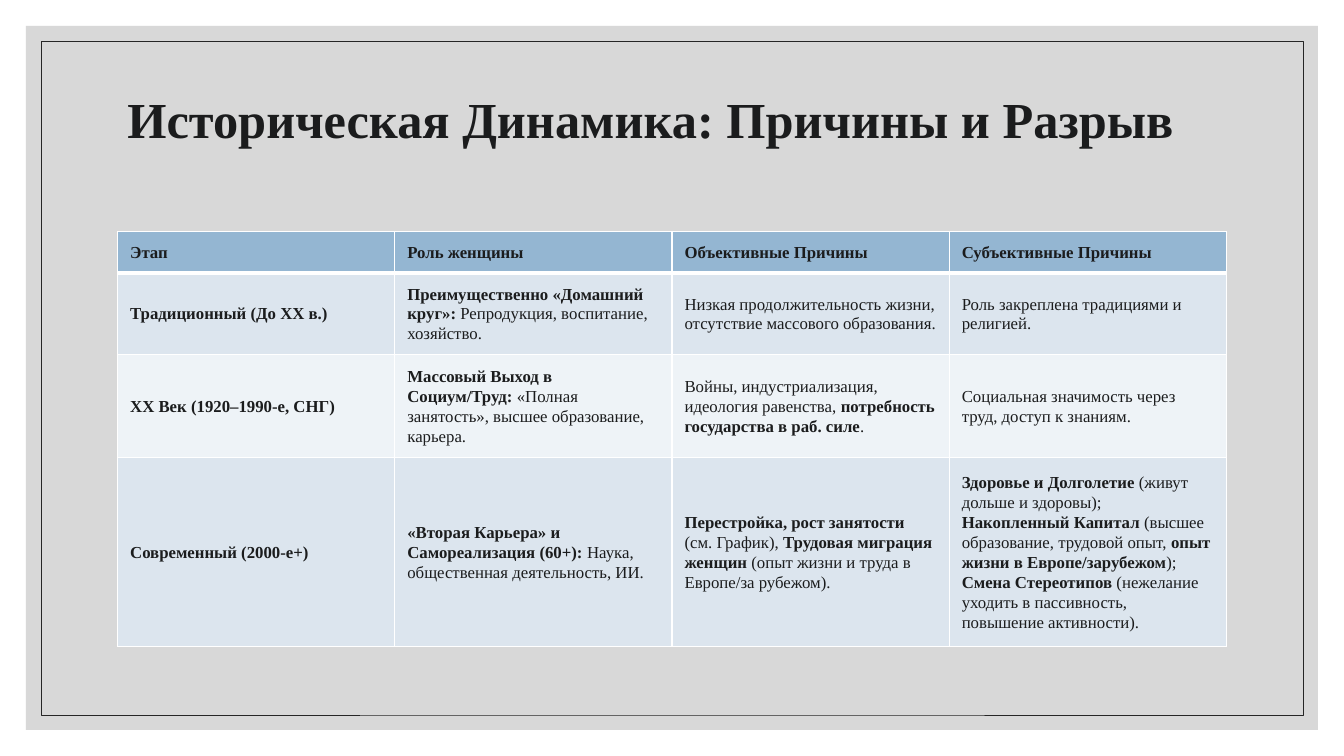
from pptx import Presentation
from pptx.dml.color import RGBColor as Rgb
from pptx.enum.shapes import MSO_SHAPE as Shape
from pptx.enum.text import MSO_ANCHOR as Anchor
from pptx.oxml import parse_xml
from pptx.util import Inches, Pt

# Theme
theme = dict(
    face="Times New Roman", ink="1B1C1D", panel="BFBFBF", frame="262626",
    rule="FFFFFF", head="94B6D2", odd="DCE5EE", even="EEF3F7",
    title=36, body=12, lead=1.07,
)
NS = "http://schemas.openxmlformats.org/drawingml/2006/main"


def unit(n):
    """Length of n steps on a grid of 160 columns by 90 rows."""
    return Inches(n / 12)


def write(area, text, size, bold, form):
    """Fill a text frame; parts between asterisks are bold."""
    for key, val in form.items():
        setattr(area, key, val)
    par = area.paragraphs[0]
    par.line_spacing = theme["lead"]
    for i, part in enumerate(text.split("*")):
        if part:
            run = par.add_run()
            run.text = part
            look = dict(name=theme["face"], size=Pt(size), bold=bold or i % 2 == 1)
            for key, val in look.items():
                setattr(run.font, key, val)
            run.font.color.rgb = Rgb.from_string(theme["ink"])


deck = Presentation()
deck.slide_width, deck.slide_height = unit(160), unit(90)
slide = deck.slides.add_slide(deck.slide_layouts[6])

# Grey panel and thin frame
for gap, kind in ((3.1, "panel"), (4.87, "frame")):
    box = slide.shapes.add_shape(
        Shape.RECTANGLE, unit(gap), unit(gap), unit(160 - 2 * gap), unit(90 - 2 * gap))
    box.shadow.inherit = False
    tone = Rgb.from_string(theme[kind])
    if kind == "panel":
        box.fill.solid()
        box.fill.fore_color.rgb = tone
        box.line.fill.background()
        clr = box.fill._xPr.find(f".//{{{NS}}}srgbClr")
        clr.append(parse_xml(f'<a:alpha xmlns:a="{NS}" val="60000"/>'))
    else:
        box.fill.background()
        box.line.color.rgb = tone
        box.line.width = Pt(0.5)

# Title, raised above the middle by its bottom margin
title = slide.shapes.add_textbox(unit(14), unit(8.4), unit(132), unit(18))
write(title.text_frame, "Историческая Динамика: Причины и Разрыв", theme["title"], True,
      dict(word_wrap=True, vertical_anchor=Anchor.MIDDLE, margin_bottom=unit(7.7)))

# Table content
rows = [
    ("*Этап*", "*Роль женщины*", "*Объективные Причины*", "*Субъективные Причины*"),
    ("*Традиционный (До XX в.)*",
     "*Преимущественно «Домашний круг»:* Репродукция, воспитание, хозяйство.",
     "Низкая продолжительность жизни, отсутствие массового образования.",
     "Роль закреплена традициями и религией."),
    ("*XX Век (1920–1990-е, СНГ)*",
     "*Массовый Выход в Социум/Труд:* «Полная занятость», высшее образование, карьера.",
     "Войны, индустриализация, идеология равенства, "
     "*потребность государства в раб. силе*.",
     "Социальная значимость через труд, доступ к знаниям."),
    ("*Современный (2000-е+)*",
     "*«Вторая Карьера» и Самореализация (60+):* Наука, общественная деятельность, ИИ.",
     "*Перестройка, рост занятости* (см. График), *Трудовая миграция женщин* "
     "(опыт жизни и труда в Европе/за рубежом).",
     "*Здоровье и Долголетие* (живут дольше и здоровы); "
     "*Накопленный Капитал* (высшее образование, трудовой опыт, "
     "*опыт жизни в Европе/зарубежом*); "
     "*Смена Стереотипов* (нежелание уходить в пассивность, повышение активности)."),
]
fills = ("head", "odd", "even", "odd")
form = dict(vertical_anchor=Anchor.MIDDLE, margin_left=unit(1.5),
            margin_right=unit(1.5), margin_top=unit(1), margin_bottom=unit(1))

# Table; rows grow with their text
grid = slide.shapes.add_table(
    4, 4, unit(14), unit(27.6), unit(132), unit(49)).table
for col in grid.columns:
    col.width = unit(33)
for r, row in enumerate(rows):
    grid.rows[r].height = unit(4.9)
    for c, text in enumerate(row):
        cell = grid.cell(r, c)
        for key, val in form.items():
            setattr(cell, key, val)
        write(cell.text_frame, text, theme["body"], False, dict(word_wrap=True))
        cell.fill.solid()
        cell.fill.fore_color.rgb = Rgb.from_string(theme[fills[r]])
        # White rules, thick below the header
        for n, side in enumerate("LRTB"):
            thick = (r, side) in ((0, "B"), (1, "T"))
            cell._tc.get_or_add_tcPr().insert(n, parse_xml(
                f'<a:ln{side} xmlns:a="{NS}" w="{Pt(3 if thick else 1)}"><a:solidFill>'
                f'<a:srgbClr val="{theme["rule"]}"/></a:solidFill></a:ln{side}>'))

deck.save("out.pptx")
